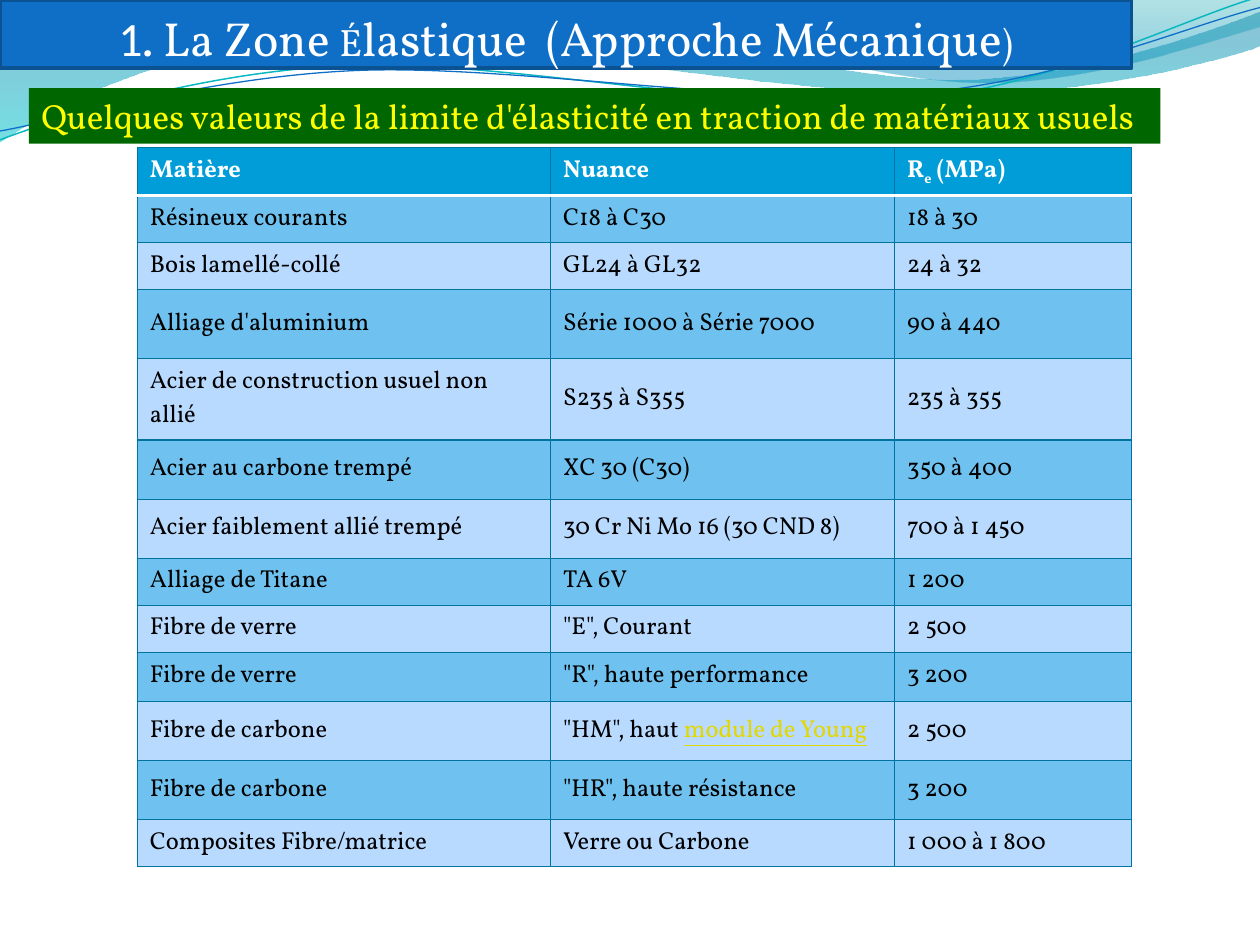
import pptx
from dataclasses import dataclass
from lxml import etree
from pptx.dml.color import RGBColor
from pptx.enum.shapes import MSO_SHAPE
from pptx.enum.text import MSO_ANCHOR, MSO_AUTO_SIZE, PP_ALIGN
from pptx.oxml import parse_xml
from pptx.oxml.ns import nsdecls, qn
from pptx.util import Inches, Pt


@dataclass(frozen=True)
class Theme:
    font: str = "Vollkorn"
    number_font: str = "Calibri"
    title_size: float = 27.3
    band_size: float = 20
    table_size: float = 14
    white: str = "FFFFFF"
    black: str = "000000"
    blue: str = "0F6FC6"
    blue_edge: str = "0B5292"
    green: str = "006600"
    yellow: str = "FFFF00"
    link: str = "E2D700"
    header: str = "009DD9"
    row_dark: str = "6FC2F0"
    row_light: str = "B9DAFF"
    border: str = "0074A1"
    aqua: str = "0AB8BF"


T = Theme()
rgb = RGBColor.from_string


def add_wave(shapes, start, segments, close):
    """Draw an outline of points (two numbers) and cubic curves (six), in inches."""
    builder = shapes.build_freeform(Inches(start[0]), Inches(start[1]))
    for seg in segments:
        points = zip(seg[::2], seg[1::2])
        builder.add_line_segments([(Inches(x), Inches(y)) for x, y in points], close=False)
    if close:
        builder.add_line_segments([], close=True)
    sp = builder.convert_to_shape()
    sp.shadow.inherit = False
    lines = iter(sp._element.spPr.findall(".//" + qn("a:lnTo")))
    for seg in segments:
        first = next(lines)
        if len(seg) == 6:
            first.tag = qn("a:cubicBezTo")
            for extra in (next(lines), next(lines)):
                first.append(extra[0])
                extra.getparent().remove(extra)
    return sp


def style_run(r, size, color, font=T.font, bold=False):
    r.font.size = Pt(size)
    r.font.name = font
    r.font.bold = bold
    r.font.color.rgb = rgb(color)
    return r._r.get_or_add_rPr()


prs = pptx.Presentation()
prs.slide_width, prs.slide_height = Inches(10), Inches(7.5)
s = prs.slides.add_slide(prs.slide_layouts[6])

# Waves behind the title: start, segments, gradient stops (position, colour, opacity)
wave_fills = [
    ((0, 0), [(4.4, -0.01), (4.76, 0.17, 6.64, 0.63, 7.58, 0.63),
              (8.53, 0.63, 9.58, 0.26, 10, 0.09), (10.01, 0.36),
              (9.83, 0.44, 8.7, 0.76, 7.46, 0.75), (6.22, 0.75, 3.82, 0.28, 2.57, 0.34),
              (1.29, 0.36, 0.46, 0.83, -0.01, 1.13)],
     [(0, "0074A1", 45), (1, "00C6CF", 55)]),
    ((4.79, -0.01), [(5.09, 0.11, 6.82, 0.62, 7.69, 0.65),
                     (8.56, 0.69, 9.61, 0.32, 10, 0.21), (10, 0)],
     [(0, "00A1A9", 30), (0.8, "008BBF", 45)]),
]
for start, segments, stops in wave_fills:
    sp = add_wave(s.shapes, start, segments, True)
    sp.line.fill.background()
    sp.fill.gradient()
    sp.fill.gradient_angle = 270
    for stop, (position, color, _) in zip(sp.fill.gradient_stops, stops):
        stop.position = position
        stop.color.rgb = rgb(color)
    colors = sp._element.spPr.findall(".//" + qn("a:srgbClr"))
    for clr, (_, _, opacity) in zip(colors, stops):
        etree.SubElement(clr, qn("a:alpha")).set("val", str(opacity * 1000))

wave_lines = [
    ((0, 1.11), [(0.48, 0.93, 1.58, 0.57, 2.77, 0.52), (3.95, 0.47, 5.93, 0.89, 7.13, 0.8),
                 (8.33, 0.71, 9.38, 0.15, 9.98, -0.02)], T.aqua, 0.85),
    ((0, 1.04), [(0.47, 0.96, 1.64, 0.61, 2.83, 0.56), (4.03, 0.51, 5.97, 0.84, 7.17, 0.75),
                 (8.36, 0.67, 9.41, 0.21, 10, 0.06)], T.blue, 0.75),
]
for start, segments, color, width in wave_lines:
    sp = add_wave(s.shapes, start, segments, False)
    sp.fill.background()
    sp.line.color.rgb = rgb(color)
    sp.line.width = Pt(width)

# Table of elastic limits
rows = [
    ("Matière", "Nuance", ("R", "e", " (MPa)"), 0.35),
    ("Résineux courants", "C18 à C30", "18 à 30", 0.35),
    ("Bois lamellé-collé", "GL24 à GL32", "24 à 32", 0.35),
    ("Alliage d'aluminium", "Série 1000 à Série 7000", "90 à 440", 0.55),
    ("Acier de construction usuel non allié", "S235 à S355", "235 à 355", 0.55),
    ("Acier au carbone trempé", "XC 30 (C30)", "350 à 400", 0.47),
    ("Acier faiblement allié trempé", "30 Cr Ni Mo 16 (30 CND 8)", "700 à 1 450", 0.47),
    ("Alliage de Titane", "TA 6V", "1 200", 0.35),
    ("Fibre de verre", '"E", Courant', "2 500", 0.35),
    ("Fibre de verre", '"R", haute performance', "3 200", 0.39),
    ("Fibre de carbone", ('"HM", haut ', "module de Young"), "2 500", 0.47),
    ("Fibre de carbone", '"HR", haute résistance', "3 200", 0.47),
    ("Composites Fibre/matrice", "Verre ou Carbone", "1 000 à 1 800", 0.14),
]
table = s.shapes.add_table(len(rows), 3, Inches(1.09), Inches(1.17),
                           Inches(7.89), Inches(5.45)).table
table.horz_banding = False
for column, width in zip(table.columns, (3.28, 2.73, 1.88)):
    column.width = Inches(width)
for i, (*texts, height) in enumerate(rows):
    table.rows[i].height = Inches(height)
    fill = T.header if i == 0 else T.row_dark if i % 2 else T.row_light
    for j, text in enumerate(texts):
        cell = table.cell(i, j)
        cell.vertical_anchor = MSO_ANCHOR.MIDDLE
        cell.fill.solid()
        cell.fill.fore_color.rgb = rgb(fill)
        p = cell.text_frame.paragraphs[0]
        for k, piece in enumerate([text] if isinstance(text, str) else text):
            r = p.add_run()
            r.text = piece
            rPr = style_run(r, T.table_size, T.black if i else T.white, bold=i == 0)
            if k == 1 and i == 0:
                rPr.set("baseline", "-25000")
            elif k == 1:
                r.font.underline = True
                r.font.color.rgb = rgb(T.link)
        for k, side in enumerate("LRTB"):
            under_header = (i, side) in ((0, "B"), (1, "T"))
            color, width = (T.white, 2) if under_header else (T.border, 0.75)
            cell._tc.get_or_add_tcPr().insert(k, parse_xml(
                f'<a:ln{side} {nsdecls("a")} w="{Pt(width)}"><a:solidFill>'
                f'<a:srgbClr val="{color}"/></a:solidFill></a:ln{side}>'))

# Subtitle band
band = s.shapes.add_shape(MSO_SHAPE.RECTANGLE, Inches(0.23), Inches(0.7),
                          Inches(8.98), Inches(0.44))
band.fill.solid()
band.fill.fore_color.rgb = rgb(T.green)
band.line.fill.background()
band.shadow.inherit = False
tf = band.text_frame
tf.word_wrap = True
tf.auto_size = MSO_AUTO_SIZE.SHAPE_TO_FIT_TEXT
tf.vertical_anchor = MSO_ANCHOR.TOP
tf.text = "Quelques valeurs de la limite d'élasticité en traction de matériaux usuels"
p = tf.paragraphs[0]
p.alignment = PP_ALIGN.LEFT
style_run(p.runs[0], T.band_size, T.yellow).insert(0, parse_xml(
    f'<a:ln {nsdecls("a")} w="{Pt(0.75)}"><a:solidFill>'
    f'<a:srgbClr val="{T.yellow}"/></a:solidFill></a:ln>'))

# Title bar
title = s.shapes.add_shape(MSO_SHAPE.RECTANGLE, 0, 0, Inches(8.98), Inches(0.54))
title.shadow.inherit = False
title.fill.solid()
title.fill.fore_color.rgb = rgb(T.blue)
title.line.color.rgb = rgb(T.blue_edge)
title.line.width = Pt(2)
tf = title.text_frame
tf.word_wrap = True
tf.vertical_anchor = MSO_ANCHOR.MIDDLE
tf.margin_left = tf.margin_right = tf.margin_bottom = 0
tf.margin_top = Inches(0.05)
p = tf.paragraphs[0]
p.alignment = PP_ALIGN.CENTER
for text, font, small_caps in [("1", T.number_font, False), (". La Zone ", T.font, False),
                               ("é", T.font, True),
                               ("lastique  (Approche Mécanique", T.font, False),
                               (")", T.font, True)]:
    r = p.add_run()
    r.text = text
    rPr = style_run(r, T.title_size, T.white, font)
    if small_caps:
        rPr.set("cap", "small")

prs.save("out.pptx")
